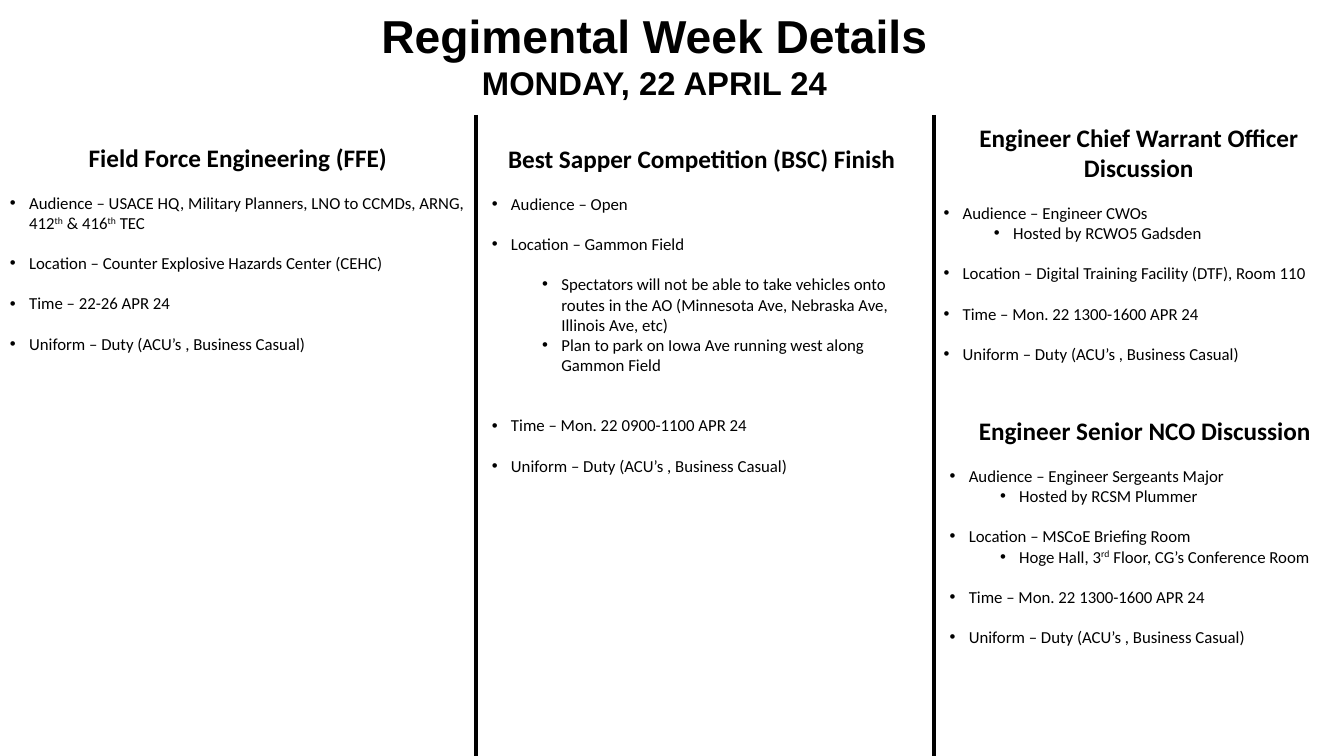
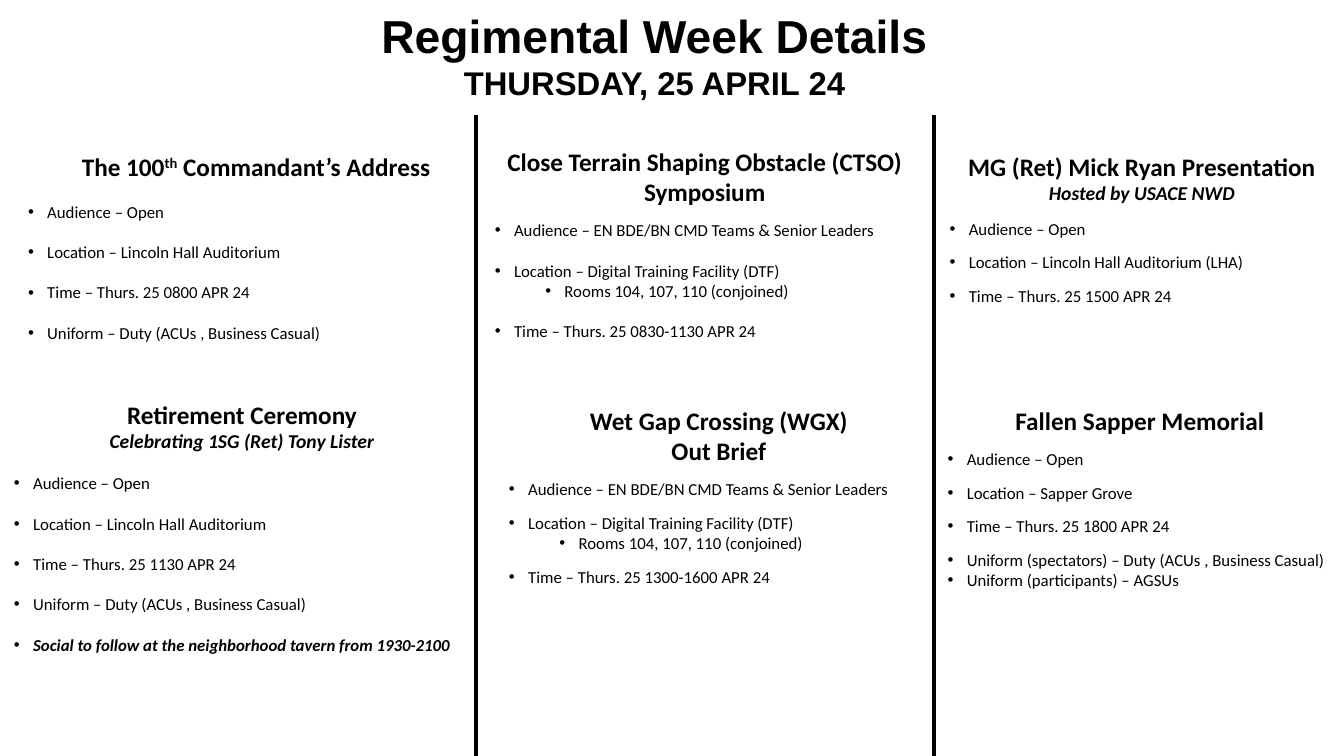
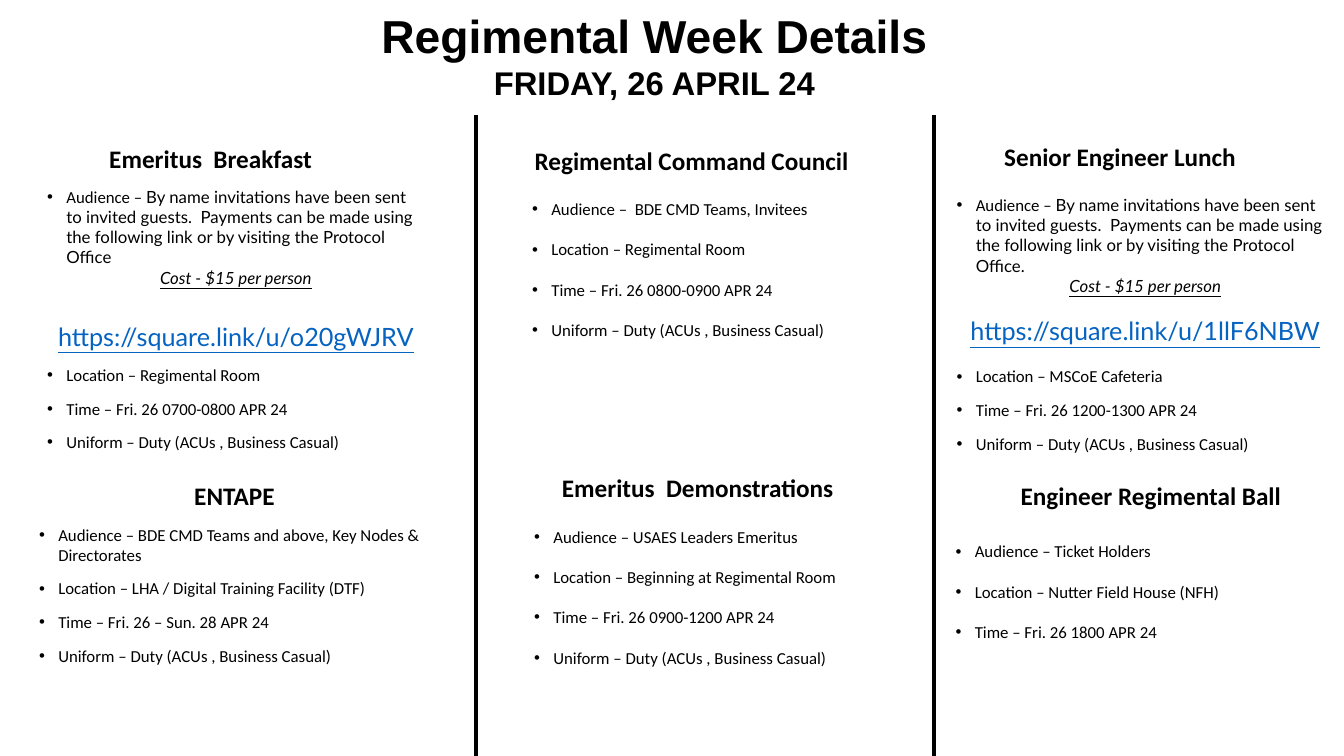
from dataclasses import dataclass

from lxml import etree
from pptx import Presentation
from pptx import util as u
from pptx.dml.color import RGBColor
from pptx.enum import shapes, text
from pptx.oxml.ns import qn


@dataclass(frozen=True)
class Theme:
    ink: str = "000000"
    link: str = "0563C1"
    title_font: str = "Arial"
    body_font: str = "Calibri"
    invite_font: str = "Lato"
    title: float = 33
    day: float = 23.4
    heading: float = 18
    subheading: float = 14
    body: float = 12
    small: float = 8
    rule: float = 3
    line_height: float = 1.2


@dataclass(frozen=True)
class Line:
    """One paragraph; words between ^ marks take the accent."""
    words: str
    size: float = 12
    gap: float = 0
    level: int = 0
    bullet: bool = False
    bold: bool = False
    italic: bool = False
    underline: bool = False
    color: str = Theme.ink
    font: str = Theme.body_font
    accent: str = "superscript"
    spacing: float = 1


@dataclass(frozen=True)
class Panel:
    """A block of lines, nudged by (right, down) from its grid cell."""
    column: int
    row: int
    nudge: tuple
    size: tuple
    lines: list


THEME = Theme()
WIDTH, HEIGHT = 13.33, 7.5
COLUMNS = (0, 4.72, 9.26)
ROWS = (1.4, 4, 4.7)
RULE_TOP = 1.14
TITLE_LEFT, TITLE_WIDTH = 0.53, 11.92
HANG, LEVEL_STEP = 0.19, 0.5
UNIFORM = "Uniform – Duty (ACUs , Business Casual)"
UNIFORM_MONDAY = "Uniform – Duty (ACU’s , Business Casual)"
DTF = "Location – Digital Training Facility (DTF)"
DTF_ROOMS = "> Rooms 104, 107, 110 (conjoined)"
LEADERS = "Audience – EN BDE/BN CMD Teams & Senior Leaders"
INVITATION = ("Audience – ^By name invitations have been sent to invited guests.  "
              "Payments can be made using the following link or by visiting "
              "the Protocol Office")


def heading(words):
    return Line(words, THEME.heading, bold=True)


def subheading(words):
    return Line(words, THEME.subheading, bold=True, italic=True)


def details(*items, first=THEME.body, gap=THEME.body, level=0):
    """Bullets set apart by gap; an item that starts with > is a close sub-bullet."""
    lines = []
    for item in items:
        if item.startswith("> "):
            lines.append(Line(item[2:], level=level + 1, bullet=True))
        else:
            space = gap if lines else first
            lines.append(Line(item, gap=space, level=level, bullet=True))
    return lines


def invitation(words, address, first, before_link):
    return [
        Line(words, gap=first, level=1, bullet=True, accent=THEME.invite_font),
        Line("Cost - $15 per person", level=1, italic=True, underline=True,
             font=THEME.invite_font),
        Line(address, THEME.heading, gap=before_link, level=1, underline=True,
             color=THEME.link, font=THEME.invite_font),
    ]


def add_bullet(properties):
    etree.SubElement(properties, qn("a:buFont"), typeface=THEME.title_font)
    etree.SubElement(properties, qn("a:buChar"), char="•")


def write_line(para, line):
    properties = para._p.get_or_add_pPr()
    para.level = line.level
    para.line_spacing = line.spacing
    if line.gap:
        para.space_before = u.Pt(line.gap * THEME.line_height)
    hang = HANG if line.bullet else 0
    properties.set("marL", str(u.Inches(line.level * LEVEL_STEP + hang)))
    properties.set("indent", str(u.Inches(-hang)))
    if line.bullet:
        add_bullet(properties)
    else:
        para.alignment = text.PP_ALIGN.CENTER
    font = para.font
    font.name, font.size = line.font, u.Pt(line.size)
    font.bold, font.italic, font.underline = line.bold, line.italic, line.underline
    font.color.rgb = RGBColor.from_string(line.color)
    for index, words in enumerate(line.words.split("^")):
        span = para.add_run()
        span.text = words
        if index % 2 and line.accent == "superscript":
            span._r.get_or_add_rPr().set("baseline", "30000")
        elif index % 2:
            span.font.name = line.accent


def add_text(page, left, top, width, height, lines, anchor=text.MSO_ANCHOR.TOP):
    box = page.shapes.add_textbox(*map(u.Inches, (left, top, width, height)))
    frame = box.text_frame
    frame.word_wrap = True
    frame.vertical_anchor = anchor
    for index, line in enumerate(lines):
        para = frame.add_paragraph() if index else frame.paragraphs[0]
        write_line(para, line)
    return frame


def add_panel(page, panel):
    right, down = panel.nudge
    frame = add_text(page, COLUMNS[panel.column] + right, ROWS[panel.row] + down,
                     *panel.size, panel.lines)
    frame.auto_size = text.MSO_AUTO_SIZE.SHAPE_TO_FIT_TEXT


def add_column_rule(page, left):
    rule = page.shapes.add_connector(
        shapes.MSO_CONNECTOR.STRAIGHT,
        *map(u.Inches, (left, RULE_TOP, left, HEIGHT)))
    rule.line.color.rgb = RGBColor.from_string(THEME.ink)
    rule.line.width = u.Pt(THEME.rule)
    etree.SubElement(rule._element.spPr, qn("a:effectLst"))


def add_day(deck, day, panels):
    page = deck.slides.add_slide(deck.slide_layouts[6])
    banner = (("Regimental Week Details", THEME.title, 0.08, 0.61),
              (day, THEME.day, 0.55, 0.58))
    for words, size, top, height in banner:
        line = Line(words, size, bold=True, font=THEME.title_font, spacing=0.9)
        add_text(page, TITLE_LEFT, top, TITLE_WIDTH, height, [line],
                 text.MSO_ANCHOR.MIDDLE)
    for left in COLUMNS[1:]:
        add_column_rule(page, left)
    for panel in panels:
        add_panel(page, panel)


def monday():
    spectators = ("> Spectators will not be able to take vehicles onto routes in the AO "
                  "(Minnesota Ave, Nebraska Ave, Illinois Ave, etc)")
    return [
        Panel(0, 0, (0, -0.04), (4.72, 2.2), [
            heading("Field Force Engineering (FFE)"),
            *details("Audience – USACE HQ, Military Planners, LNO to CCMDs, ARNG, "
                     "412^th^ & 416^th^ TEC",
                     "Location – Counter Explosive Hazards Center (CEHC)",
                     "Time – 22-26 APR 24", UNIFORM_MONDAY)]),
        Panel(1, 0, (0.06, -0.03), (4.36, 3.64), [
            heading("Best Sapper Competition (BSC) Finish"),
            *details("Audience – Open", "Location – Gammon Field"),
            Line(spectators[2:], gap=THEME.body, level=1, bullet=True),
            *details("> Plan to park on Iowa Ave running west along Gammon Field"),
            *details("Time – Mon. 22 0900-1100 APR 24", UNIFORM_MONDAY,
                     first=2 * THEME.body)]),
        Panel(2, 0, (0, -0.24), (4.07, 2.93), [
            heading("Engineer Chief Warrant Officer Discussion"),
            *details("Audience – Engineer CWOs", "> Hosted by RCWO5 Gadsden",
                     "Location – Digital Training Facility (DTF), Room 110",
                     "Time – Mon. 22 1300-1600 APR 24", UNIFORM_MONDAY)]),
        Panel(2, 1, (0.06, 0.07), (4.07, 2.83), [
            heading("Engineer Senior NCO Discussion"),
            *details("Audience – Engineer Sergeants Major", "> Hosted by RCSM Plummer",
                     "Location – MSCoE Briefing Room",
                     "> Hoge Hall, 3^rd^ Floor, CG’s Conference Room",
                     "Time – Mon. 22 1300-1600 APR 24", UNIFORM_MONDAY)]),
    ]


def thursday():
    small = THEME.small
    social = Line("Social to follow at the neighborhood tavern from 1930-2100",
                  gap=THEME.body, bullet=True, bold=True, italic=True)
    return [
        Panel(0, 0, (0.18, 0.05), (4.72, 2.02), [
            heading("The 100^th^ Commandant’s Address"),
            *details("Audience – Open", "Location – Lincoln Hall Auditorium",
                     "Time – Thurs. 25 0800 APR 24", UNIFORM)]),
        Panel(1, 0, (0.09, 0), (4.36, 2.12), [
            heading("Close Terrain Shaping Obstacle (CTSO)"), heading("Symposium"),
            *details(LEADERS, DTF, DTF_ROOMS, "Time – Thurs. 25 0830-1130 APR 24",
                     first=small)]),
        Panel(2, 0, (0.06, 0.05), (4.01, 1.6), [
            heading("MG (Ret) Mick Ryan Presentation"),
            subheading("Hosted by USACE NWD"),
            *details("Audience – Open", "Location – Lincoln Hall Auditorium (LHA)",
                     "Time – Thurs. 25 1500 APR 24", first=small, gap=small)]),
        Panel(0, 1, (0.04, -0.09), (4.72, 2.66), [
            heading("Retirement Ceremony"),
            subheading("Celebrating 1SG (Ret) Tony Lister"),
            *details("Audience – Open", "Location – Lincoln Hall Auditorium",
                     "Time – Thurs. 25 1130 APR 24", UNIFORM),
            social]),
        Panel(1, 1, (0.23, -0.03), (4.36, 2), [
            heading("Wet Gap Crossing (WGX)"), heading("Out Brief"),
            *details(LEADERS, DTF, DTF_ROOMS, "Time – Thurs. 25 1300-1600 APR 24",
                     first=small, gap=small)]),
        Panel(2, 1, (0.04, -0.03), (4.01, 2.02), [
            heading("Fallen Sapper Memorial"),
            *details("Audience – Open", "Location – Sapper Grove",
                     "Time – Thurs. 25 1800 APR 24",
                     "Uniform (spectators) – Duty (ACUs , Business Casual)",
                     first=small, gap=small),
            *details("Uniform (participants) – AGSUs", first=0)]),
    ]


def friday():
    small, body, medium = THEME.small, THEME.body, THEME.subheading
    return [
        Panel(0, 0, (-0.13, -0.03), (4.44, 3), [
            heading("Emeritus  Breakfast"),
            *invitation(INVITATION, "https://square.link/u/o20gWJRV",
                        first=small, before_link=body + small),
            *details("Location – Regimental Room", "Time – Fri. 26 0700-0800 APR 24",
                     UNIFORM, first=small, gap=small, level=1)]),
        Panel(1, 0, (-0.04, -0.01), (4.36, 2.26), [
            heading("Regimental Command Council"),
            *details("Audience –  BDE CMD Teams, Invitees", "Location – Regimental Room",
                     "Time – Fri. 26 0800-0900 APR 24", UNIFORM, first=medium, level=1)]),
        Panel(2, 0, (-0.37, -0.05), (4.44, 3.2), [
            heading("Senior Engineer Lunch"),
            *invitation(INVITATION + ".", "https://square.link/u/1llF6NBW",
                        first=medium, before_link=body),
            *details("Location – MSCoE Cafeteria", "Time – Fri. 26 1200-1300 APR 24",
                     UNIFORM, gap=small, level=1)]),
        Panel(0, 2, (0.29, 0.02), (4.07, 1.95), [
            heading("ENTAPE"),
            *details("Audience – BDE CMD Teams and above, Key Nodes & Directorates",
                     "Location – LHA / Digital Training Facility (DTF)",
                     "Time – Fri. 26 – Sun. 28 APR 24", UNIFORM,
                     first=small, gap=small)]),
        Panel(1, 2, (-0.02, -0.06), (4.44, 2.2), [
            heading("Emeritus  Demonstrations"),
            *details("Audience – USAES Leaders Emeritus",
                     "Location – Beginning at Regimental Room",
                     "Time – Fri. 26 0900-1200 APR 24", UNIFORM, first=medium, level=1)]),
        Panel(2, 2, (0.12, 0.02), (4.07, 1.8), [
            heading("Engineer Regimental Ball"),
            *details("Audience – Ticket Holders", "Location – Nutter Field House (NFH)",
                     "Time – Fri. 26 1800 APR 24", first=THEME.heading)]),
    ]


def main():
    deck = Presentation()
    deck.slide_width, deck.slide_height = u.Inches(WIDTH), u.Inches(HEIGHT)
    add_day(deck, "MONDAY, 22 APRIL 24", monday())
    add_day(deck, "THURSDAY, 25 APRIL 24", thursday())
    add_day(deck, "FRIDAY, 26 APRIL 24", friday())
    deck.save("out.pptx")


if __name__ == "__main__":
    main()
